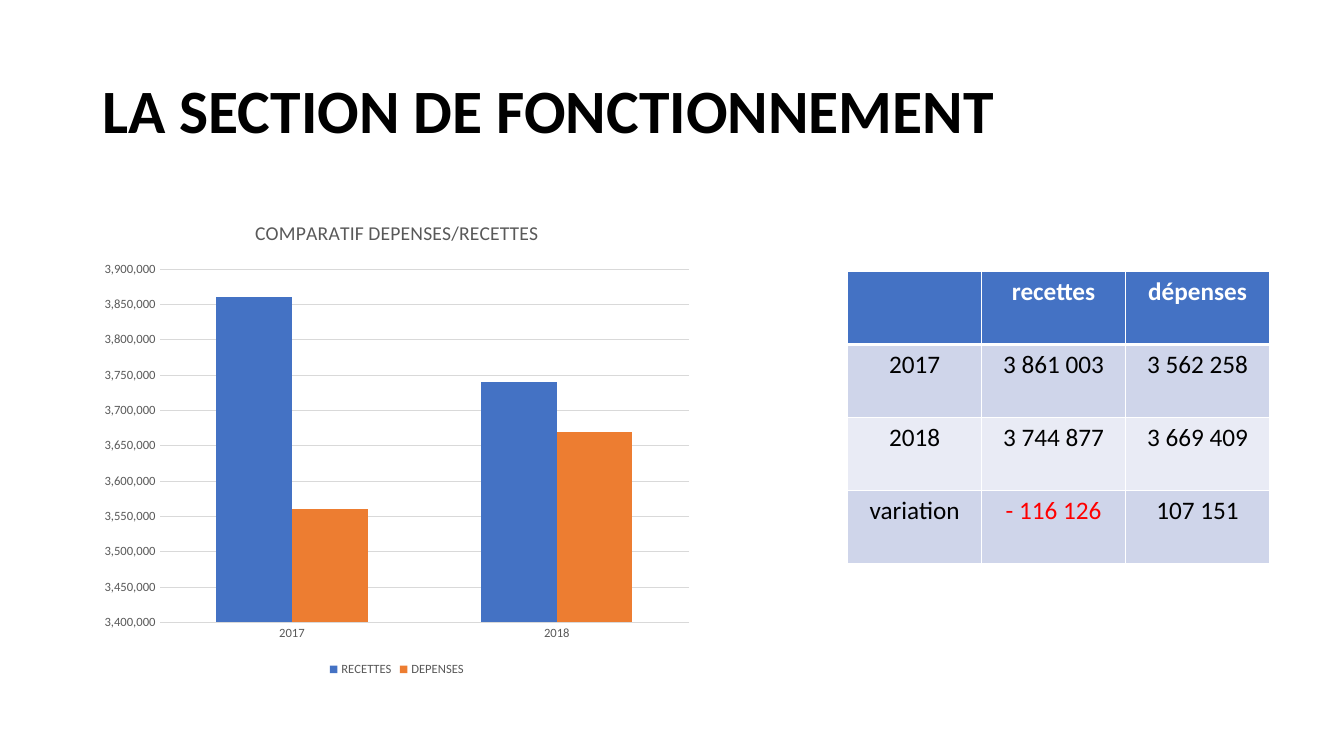
import pptx
import pptx.util
import pptx.dml.color
import pptx.chart.data
import pptx.enum.chart
import pptx.enum.text
import pptx.oxml
import pptx.oxml.ns

Pt = pptx.util.Pt
FONT = "Calibri"
COLORS = {
    "black": "000000", "white": "FFFFFF", "grey": "595959", "grid": "D9D9D9",
    "blue": "4472C4", "orange": "ED7D31", "red": "FF0000",
    "band_dark": "CFD5EA", "band_light": "E9EBF5",
}

heading = "LA SECTION DE FONCTIONNEMENT"
heading_box = (66, 28.75, 828, 104.4)

comparison_title = "COMPARATIF DEPENSES/RECETTES"
comparison_box = (66, 143.75, 435, 342.5)
years = ["2017", "2018"]
budget = [
    ("RECETTES", (3860000, 3740000), "blue"),
    ("DEPENSES", (3560000, 3670000), "orange"),
]
amount_range = (3400000, 3900000, 50000)

amounts = [
    ("", "recettes", "dépenses"),
    ("2017", "3 861 003", "3 562 258"),
    ("2018", "3 744 877", "3 669 409"),
    ("variation", "- 116 126", "107 151"),
]
amounts_origin = (605.5, 193.9)
column_widths = (95.6, 102.9, 102.9)
row_height = 52.2


def rgb(name):
    return pptx.dml.color.RGBColor.from_string(COLORS[name])


def style_font(font, size, color, bold=False):
    font.name = FONT
    font.size = Pt(size)
    font.bold = bold
    font.color.rgb = rgb(color)


def write_text(frame, text, size=18, color="black", bold=False, align=None, spacing=None):
    paragraph = frame.paragraphs[0]
    paragraph.alignment = align
    paragraph.line_spacing = spacing
    run = paragraph.add_run()
    run.text = text
    style_font(run.font, size, color, bold)


def add_border(cell, side, width):
    line = pptx.oxml.parse_xml(
        f'<a:ln{side} {pptx.oxml.ns.nsdecls("a")} w="{Pt(width)}"><a:solidFill>'
        f'<a:srgbClr val="{COLORS["white"]}"/></a:solidFill></a:ln{side}>'
    )
    cell._tc.get_or_add_tcPr().append(line)


def add_heading(slide):
    frame = slide.shapes.add_textbox(*map(Pt, heading_box)).text_frame
    frame.word_wrap = True
    frame.vertical_anchor = pptx.enum.text.MSO_ANCHOR.MIDDLE
    write_text(frame, heading, size=44, bold=True, spacing=0.9)


def add_comparison(slide):
    data = pptx.chart.data.CategoryChartData(number_format="#,##0")
    data.categories = years
    for name, values, _ in budget:
        data.add_series(name, values)
    chart = slide.shapes.add_chart(
        pptx.enum.chart.XL_CHART_TYPE.COLUMN_CLUSTERED, *map(Pt, comparison_box), data
    ).chart
    style_font(chart.font, 10, "black")
    chart.has_title = True
    write_text(chart.chart_title.text_frame, comparison_title, size=14, color="grey")
    chart.chart_title.include_in_layout = False

    chart.has_legend = True
    chart.legend.position = pptx.enum.chart.XL_LEGEND_POSITION.BOTTOM
    chart.legend.include_in_layout = False
    style_font(chart.legend.font, 9, "grey")

    plot = chart.plots[0]
    plot.gap_width = 150
    plot.overlap = 0
    plot.vary_by_categories = False
    for series, (_, _, color) in zip(plot.series, budget):
        series.format.fill.solid()
        series.format.fill.fore_color.rgb = rgb(color)

    for axis in (chart.category_axis, chart.value_axis):
        axis.major_tick_mark = pptx.enum.chart.XL_TICK_MARK.NONE
        axis.minor_tick_mark = pptx.enum.chart.XL_TICK_MARK.NONE
        axis.format.line.fill.background()
        style_font(axis.tick_labels.font, 9, "grey")

    amount_axis = chart.value_axis
    amount_axis.minimum_scale, amount_axis.maximum_scale, amount_axis.major_unit = amount_range
    amount_axis.tick_labels.number_format = "#,##0"
    amount_axis.tick_labels.number_format_is_linked = False
    amount_axis.has_major_gridlines = True
    gridline = amount_axis.major_gridlines.format.line
    gridline.color.rgb = rgb("grid")
    gridline.width = Pt(0.75)


def add_amounts(slide):
    size = (sum(column_widths), row_height * len(amounts))
    table = slide.shapes.add_table(
        len(amounts), len(column_widths), *map(Pt, amounts_origin + size)
    ).table
    for column, width in zip(table.columns, column_widths):
        column.width = Pt(width)
    for r, row in enumerate(amounts):
        table.rows[r].height = Pt(row_height)
        header = r == 0
        fill = "blue" if header else ("band_light", "band_dark")[r % 2]
        for c, text in enumerate(row):
            cell = table.cell(r, c)
            widths = {"L": 1, "R": 1, "T": 3 if r == 1 else 1, "B": 3 if header else 1}
            for side, width in widths.items():
                add_border(cell, side, width)
            cell.fill.solid()
            cell.fill.fore_color.rgb = rgb(fill)
            color = "white" if header else "red" if text.startswith("-") else "black"
            if text:
                write_text(cell.text_frame, text, color=color, bold=header,
                           align=pptx.enum.text.PP_ALIGN.CENTER)


def main():
    deck = pptx.Presentation()
    deck.slide_width, deck.slide_height = Pt(960), Pt(540)
    slide = deck.slides.add_slide(deck.slide_layouts[6])
    add_heading(slide)
    add_amounts(slide)
    add_comparison(slide)
    deck.save("out.pptx")


if __name__ == "__main__":
    main()
